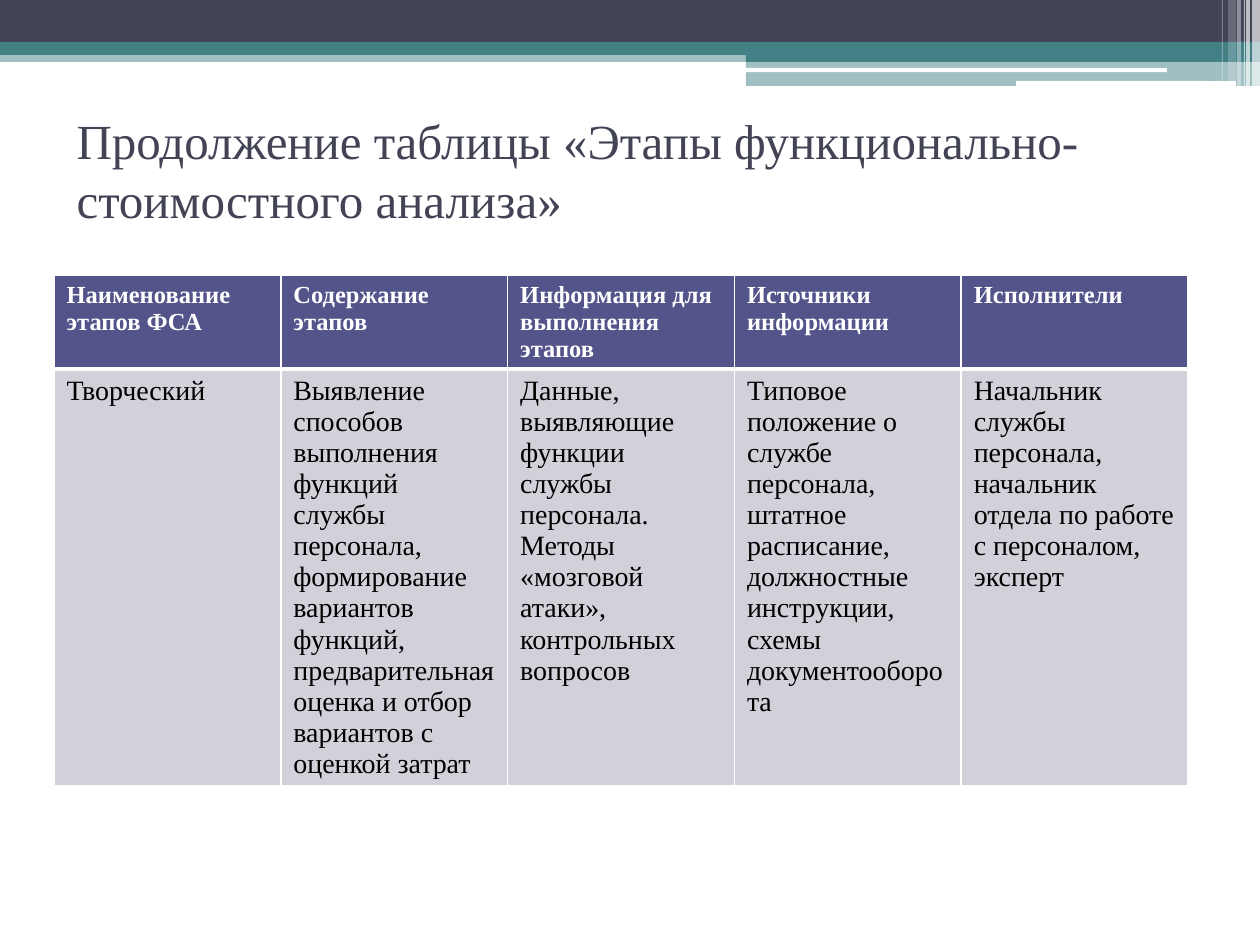
from lxml import etree
from pptx import Presentation
from pptx.dml.color import RGBColor
from pptx.enum.shapes import MSO_SHAPE
from pptx.enum.text import MSO_ANCHOR, PP_ALIGN
from pptx.oxml.ns import qn
from pptx.util import Emu, Pt

RECT = MSO_SHAPE.RECTANGLE
ROUNDED = MSO_SHAPE.ROUNDED_RECTANGLE
LEFT = PP_ALIGN.LEFT
TOP = MSO_ANCHOR.TOP
MIDDLE = MSO_ANCHOR.MIDDLE

NAVY = RGBColor(0x42, 0x44, 0x56)
TEAL = RGBColor(0x43, 0x80, 0x86)
VIOLET = RGBColor(0x53, 0x54, 0x8A)
LAVENDER = RGBColor(0xD1, 0xD1, 0xDA)
WHITE = RGBColor(0xFF, 0xFF, 0xFF)
BLACK = RGBColor(0, 0, 0)

FONT = "Times New Roman"
WIDTH, HEIGHT = 1260, 945

TITLE = "Продолжение таблицы «Этапы функционально-стоимостного анализа»"
HEADINGS = [
    "Наименование этапов ФСА",
    "Содержание этапов",
    "Информация для выполнения этапов",
    "Источники информации",
    "Исполнители",
]
STAGE = [
    "Творческий",
    "Выявление способов выполнения функций службы персонала, формирование "
    "вариантов функций, предварительная оценка и отбор вариантов с оценкой затрат",
    "Данные, выявляющие функции службы персонала. Методы «мозговой атаки», "
    "контрольных вопросов",
    "Типовое положение о службе персонала, штатное расписание, должностные "
    "инструкции, схемы документооборота",
    "Начальник службы персонала, начальник отдела по работе с персоналом, эксперт",
]


def px(length):
    return Emu(round(length * 914400 / 126))


def write(frame, text, size, color, bold=False, anchor=TOP):
    frame.word_wrap = True
    frame.vertical_anchor = anchor
    paragraph = frame.paragraphs[0]
    paragraph.alignment = LEFT
    run = paragraph.add_run()
    run.text = text
    run.font.name = FONT
    run.font.size = Pt(size)
    run.font.bold = bold
    run.font.color.rgb = color


def add_bar(slide, box, color, opacity=100, kind=RECT):
    bar = slide.shapes.add_shape(kind, *map(px, box))
    bar.shadow.inherit = False
    bar.line.fill.background()
    bar.fill.solid()
    bar.fill.fore_color.rgb = color
    if opacity < 100:
        tint = bar.fill._xPr.find(qn("a:solidFill"))[0]
        etree.SubElement(tint, qn("a:alpha"), val=str(opacity * 1000))
    return bar


def add_banner(slide, left, top, width):
    right = left + width
    step = left + 746
    bands = [
        (left, 50, width, 12, TEAL, 50),
        (left, 0, width, 42, NAVY, 100),
        (left, 42, width, 13, TEAL, 100),
        (step, 49, right - step, 13, TEAL, 100),
        (step, 61, right - step, 25, TEAL, 50),
    ]
    for x, y, w, h, color, opacity in bands:
        add_bar(slide, (x, top + y, w, h), color, opacity)

    for x, y, w, h in [(745, 68, 422, 4), (1016, 81, 220, 5)]:
        add_bar(slide, (left + x, top + y, w, h), WHITE, kind=ROUNDED)

    stripes = [
        (8, 8, 86, 65),
        (14, 4, 86, 65),
        (16, 1, 86, 60),
        (23, 4, 86, 40),
        (32, 8, 81, 20),
        (38, 1, 81, 30),
    ]
    for inset, w, h, opacity in stripes:
        add_bar(slide, (right - inset, top, w, h), WHITE, opacity)


def add_title(slide, left, top, width, height):
    title = slide.shapes.title
    title.left, title.top = px(left), px(top)
    title.width, title.height = px(width), px(height)
    write(title.text_frame, TITLE, size=28, color=NAVY, anchor=MIDDLE)


def add_borders(cell, top, bottom):
    properties = cell._tc.get_or_add_tcPr()
    for side, points in (("L", 1), ("R", 1), ("T", top), ("B", bottom)):
        border = etree.SubElement(properties, qn("a:ln" + side), w=str(Pt(points)))
        fill = etree.SubElement(border, qn("a:solidFill"))
        etree.SubElement(fill, qn("a:srgbClr"), val=str(WHITE))


def add_stages(slide, left, top, width, height):
    rows = [
        (HEADINGS, VIOLET, {"size": 14, "color": WHITE, "bold": True}, 1, 3),
        (STAGE, LAVENDER, {"size": 16, "color": BLACK}, 3, 1),
    ]
    frame = slide.shapes.add_table(
        len(rows), len(HEADINGS), px(left), px(top), px(width), px(height)
    )
    stages = frame.table
    for r, (texts, fill, style, upper, lower) in enumerate(rows):
        stages.rows[r].height = px(52)
        for c, text in enumerate(texts):
            cell = stages.cell(r, c)
            add_borders(cell, upper, lower)
            cell.fill.solid()
            cell.fill.fore_color.rgb = fill
            write(cell.text_frame, text, **style)
    frame.height = px(height)


def main():
    deck = Presentation()
    deck.slide_width, deck.slide_height = px(WIDTH), px(HEIGHT)
    slide = deck.slides.add_slide(deck.slide_layouts[5])
    add_banner(slide, 0, 0, WIDTH)
    add_title(slide, 64, 96, 1134, 147)
    add_stages(slide, 54, 275, 1134, 551)
    deck.save("out.pptx")


if __name__ == "__main__":
    main()
